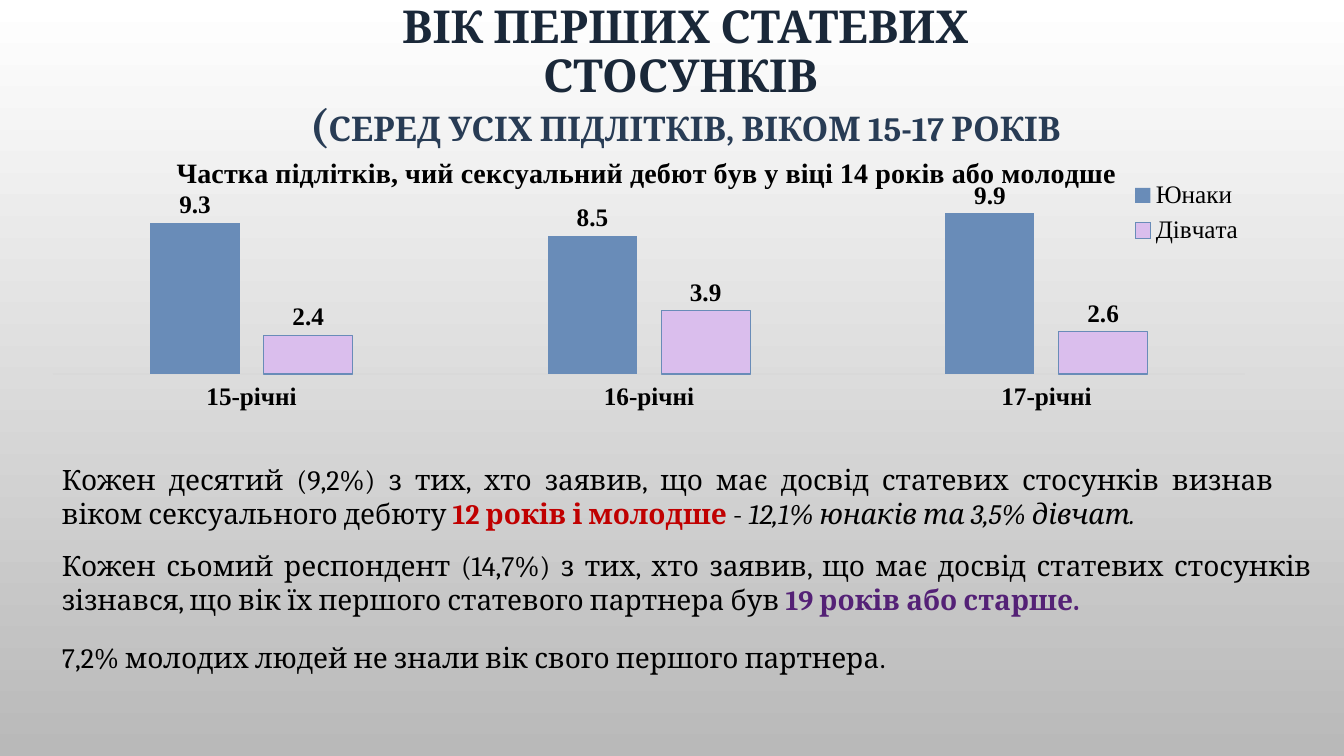
from lxml import etree
from pptx import Presentation
from pptx.chart.data import CategoryChartData
from pptx.dml.color import RGBColor
from pptx.enum.chart import (XL_CHART_TYPE, XL_LABEL_POSITION as LABEL_POS,
                             XL_LEGEND_POSITION as LEGEND_POS, XL_TICK_MARK as TICK,
                             XL_TICK_LABEL_POSITION as TICK_LABEL)
from pptx.enum.text import MSO_ANCHOR as ANCHOR, PP_ALIGN as ALIGN
from pptx.oxml.ns import qn
from pptx.util import Emu, Pt

EMU_PER_PX = 914400 / 100.8
BLACK, BLUE, LILAC = "000000", "698CB8", "DABEED"
NAVY, SLATE, RED, PURPLE = "1A2839", "283C55", "C00000", "542176"


def rgb(value):
    return RGBColor.from_string(value)


def px(n):
    return Emu(round(n * EMU_PER_PX))


def set_font(font, name, size, color=BLACK, bold=False):
    font.name, font.size, font.bold = name, Pt(size), bold
    font.color.rgb = rgb(color)


def place(element, **fractions):
    """Fix a chart title or legend at fractions of the chart area."""
    layout = element.find(qn("c:layout"))
    if layout is None:
        layout = etree.Element(qn("c:layout"))
        before = element.find(qn("c:overlay"))
        before.addprevious(layout)
    manual = etree.SubElement(layout, qn("c:manualLayout"))
    for tag in ("xMode", "yMode"):
        etree.SubElement(manual, qn(f"c:{tag}"), val="edge")
    for tag, value in fractions.items():
        etree.SubElement(manual, qn(f"c:{tag}"), val=str(value))


class Deck:
    """Holds the fonts, the presentation and the current slide."""
    text_font = "Cambria"
    chart_font = "Times New Roman"

    def __init__(self, width, height):
        self.prs = Presentation()
        self.prs.slide_width, self.prs.slide_height = px(width), px(height)
        self.slide = self.prs.slides.add_slide(self.prs.slide_layouts[6])

    def background(self, top, bottom):
        fill = self.slide.background.fill
        fill.gradient()
        fill.gradient_angle = 270
        for stop, color in zip(fill.gradient_stops, (top, bottom)):
            stop.color.rgb = rgb(color)

    def box(self, x, y, w, h):
        tf = self.slide.shapes.add_textbox(px(x), px(y), px(w), px(h)).text_frame
        tf.word_wrap = True
        return tf

    def title(self, x, y, w, h, lines):
        """Each line is a list of (text, size, colour) runs."""
        tf = self.box(x, y, w, h)
        tf.margin_top = tf.margin_bottom = 0
        tf.vertical_anchor = ANCHOR.MIDDLE
        p = tf.paragraphs[0]
        p.alignment, p.line_spacing = ALIGN.CENTER, 0.9
        p.font.name, p.font.bold = self.text_font, True
        for i, runs in enumerate(lines):
            if i:
                p.add_line_break()
            for text, size, color in runs:
                r = p.add_run()
                r.text = text
                r.font.size = Pt(size)
                r.font.color.rgb = rgb(color)

    def body(self, x, y, w, h, paragraphs, gap=17):
        """Each paragraph is a list of (text, colour, bold, italic) runs."""
        tf = self.box(x, y, w, h)
        for i, runs in enumerate(paragraphs):
            p = tf.add_paragraph() if i else tf.paragraphs[0]
            p.alignment = ALIGN.JUSTIFY
            if i:
                p.space_before = Pt(gap)
            p.font.name, p.font.size = self.text_font, Pt(20)
            for text, color, bold, italic in runs:
                r = p.add_run()
                r.text = text
                r.font.bold, r.font.italic = bold, italic
                r.font.color.rgb = rgb(color)

    def column_chart(self, x, y, w, h, title, categories, series):
        """Each series is (name, values, fill colour, line colour or None)."""
        data = CategoryChartData()
        data.categories = categories
        for name, values, *_ in series:
            data.add_series(name, values)
        chart = self.slide.shapes.add_chart(
            XL_CHART_TYPE.COLUMN_CLUSTERED, px(x), px(y), px(w), px(h), data).chart
        set_font(chart.font, self.chart_font, 18)

        p = chart.chart_title.text_frame.paragraphs[0]
        p.text = title
        set_font(p.font, self.chart_font, 20, bold=True)
        chart.chart_title.include_in_layout = False
        chart.has_legend = True
        legend = chart.legend
        legend.position, legend.include_in_layout = LEGEND_POS.RIGHT, False
        set_font(legend.font, self.chart_font, 18)

        axis = chart.category_axis
        axis.major_tick_mark = axis.minor_tick_mark = TICK.NONE
        axis.tick_label_position = TICK_LABEL.LOW
        axis.format.line.color.rgb = rgb("D9D9D9")
        axis.format.line.width = Pt(0.75)
        set_font(axis.tick_labels.font, self.chart_font, 18, bold=True)
        scale = chart.value_axis
        scale.visible = scale.has_major_gridlines = False
        scale.minimum_scale, scale.maximum_scale = 0, 12

        plot = chart.plots[0]
        plot.gap_width, plot.overlap = 219, -27
        plot.vary_by_categories = False
        for s, (_, _, fill, line) in zip(plot.series, series):
            s.format.fill.solid()
            s.format.fill.fore_color.rgb = rgb(fill)
            if line:
                s.format.line.color.rgb = rgb(line)
                s.format.line.width = Pt(0.75)
            labels = s.data_labels
            labels.show_value, labels.position = True, LABEL_POS.OUTSIDE_END
            set_font(labels.font, self.chart_font, 18, bold=True)
        return chart


def main():
    deck = Deck(1344, 756)
    deck.background("FFFFFF", "B9B9B9")
    deck.title(257, 4, 857, 147, [
        [("ВІК ПЕРШИХ СТАТЕВИХ СТОСУНКІВ ", 32.4, NAVY)],
        [("(", 32.4, SLATE), ("СЕРЕД УСІХ ПІДЛІТКІВ, ВІКОМ 15-17 РОКІВ", 24.3, SLATE)],
    ])
    chart = deck.column_chart(
        37, 132, 1223, 300,
        "Частка підлітків, чий сексуальний дебют був у віці 14 років або молодше",
        ["15-річні", "16-річні", "17-річні"],
        [("Юнаки", (9.3, 8.5, 9.9), BLUE, None),
         ("Дівчата", (2.4, 3.9, 2.6), LILAC, BLUE)])
    root = chart.element
    place(root.find(".//" + qn("c:title")), x=0.11, y=0.06)
    place(root.find(".//" + qn("c:legend")), x=0.89, y=0.14, w=0.1, h=0.26)
    plot_area = root.find(".//" + qn("c:plotArea"))
    if plot_area.find(qn("c:layout")) is None:
        plot_area.insert(0, etree.Element(qn("c:layout")))
    place(plot_area, x=0.013, y=0.158, w=0.975, h=0.649)
    manual = plot_area.find(qn("c:layout"))[0]
    manual.insert(0, etree.Element(qn("c:layoutTarget"), val="inner"))

    deck.body(52, 458, 1231, 78, [[
        ("Кожен десятий (9,2%) з тих, хто заявив, що має досвід статевих стосунків "
         "визнав віком сексуального дебюту ", BLACK, False, False),
        ("12 років і молодше", RED, True, False),
        (" - ", BLACK, False, False),
        ("12,1% юнаків та 3,5% дівчат.", BLACK, False, True),
    ]])
    deck.body(52, 544, 1269, 136, [
        [("Кожен сьомий респондент (14,7%) з тих, хто заявив, що має досвід статевих "
          "стосунків зізнався, що вік їх першого статевого партнера був ",
          BLACK, False, False),
         ("19 років або старше.", PURPLE, True, False)],
        [("7,2% молодих людей не знали вік свого першого партнера.",
          BLACK, False, False)],
    ])
    deck.prs.save("out.pptx")


if __name__ == "__main__":
    main()
